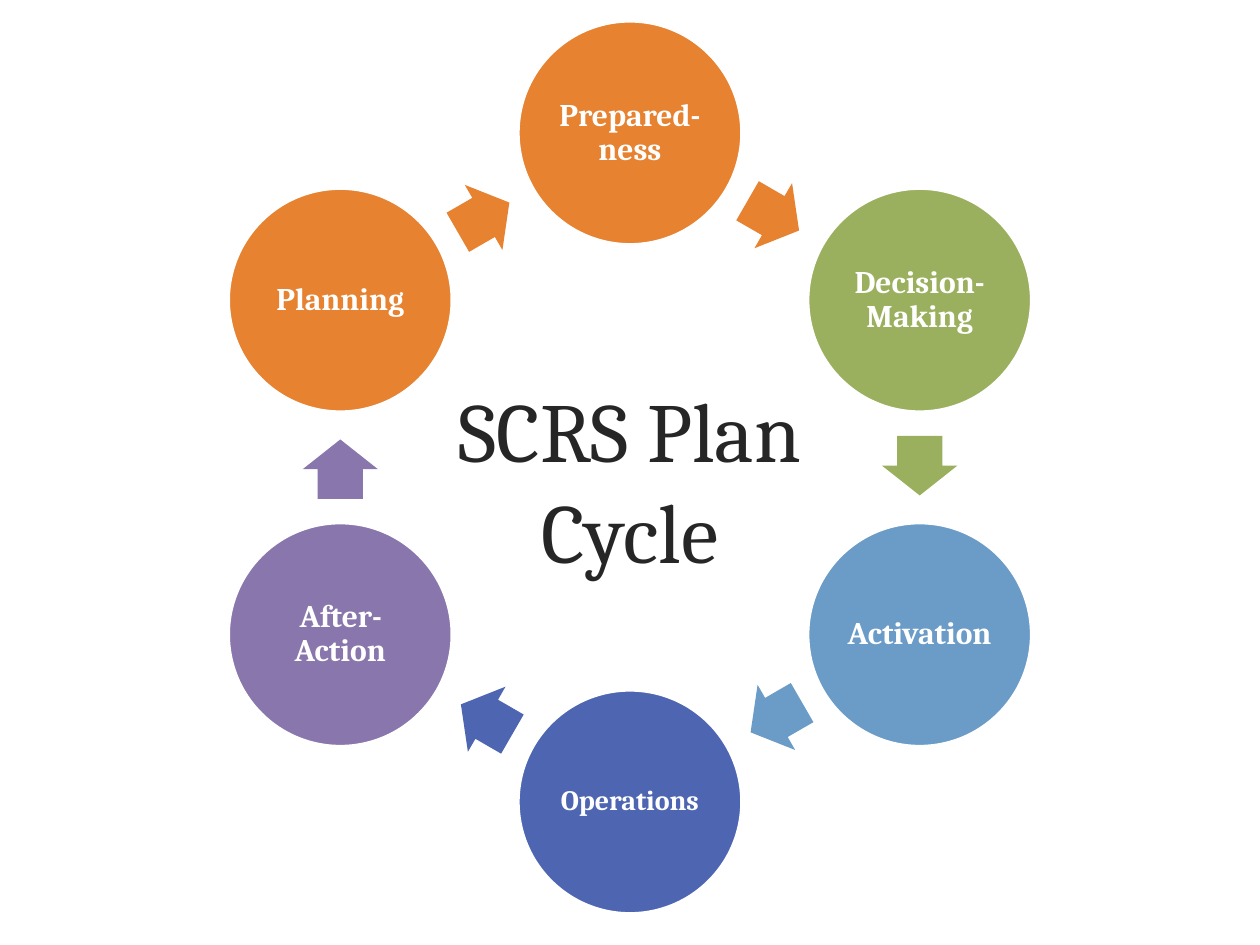
import math

from pptx import Presentation
from pptx.dml.color import RGBColor
from pptx.enum.shapes import MSO_SHAPE
from pptx.enum.text import MSO_ANCHOR, PP_ALIGN
from pptx.util import Pt

OVAL, ARROW = MSO_SHAPE.OVAL, MSO_SHAPE.RIGHT_ARROW
MIDDLE, CENTER = MSO_ANCHOR.MIDDLE, PP_ALIGN.CENTER
FONT = "Cambria"
STAGES = [
    ("Prepared-ness", "E68230", 18),
    ("Decision-Making", "9BB05E", 18),
    ("Activation", "6B9BC7", 18),
    ("Operations", "4E66B2", 16),
    ("After-Action", "8976AC", 18),
    ("Planning", "E68230", 18),
]


def rgb(value):
    """Return a colour from a hex string."""
    return RGBColor.from_string(value)


def add_run(p, text, size, color, bold=False):
    """Add one formatted run to a paragraph."""
    r = p.add_run()
    r.text = text
    r.font.name = FONT
    r.font.size = Pt(size)
    r.font.bold = bold
    r.font.color.rgb = rgb(color)


def add_centered(s, kind, cx, cy, w, h, color):
    """Add a filled preset shape around a centre point."""
    sp = s.shapes.add_shape(kind, Pt(cx - w / 2), Pt(cy - h / 2), Pt(w), Pt(h))
    sp.shadow.inherit = False
    sp.fill.solid()
    sp.fill.fore_color.rgb = rgb(color)
    sp.line.fill.background()
    return sp


def add_stage(s, cx, cy, diameter, label, color, size):
    """Add one labelled circle of the cycle."""
    sp = add_centered(s, OVAL, cx, cy, diameter, diameter, color)
    sp.line.color.rgb = rgb("FFFFFF")
    sp.line.width = Pt(1.5)
    tf = sp.text_frame
    tf.word_wrap = True
    tf.vertical_anchor = MIDDLE
    tf.margin_left = tf.margin_right = tf.margin_top = tf.margin_bottom = Pt(size / 8)
    p = tf.paragraphs[0]
    p.alignment = CENTER
    p.line_spacing = 0.9
    add_run(p, label, size, "FFFFFF", True)


def add_cycle(s, x, y, w, h):
    """Add the ring of circles and arrows inside a box."""
    diameter = 127.5
    radius = (h - diameter) / 2
    cx, cy = x + w / 2, y + h / 2
    step = 360 / len(STAGES)
    mid_radius = radius * math.cos(math.radians(step / 2))
    for i, (label, color, size) in enumerate(STAGES):
        a = math.radians(i * step - 90)
        add_stage(s, cx + radius * math.cos(a), cy + radius * math.sin(a),
                  diameter, label, color, size)
        heading = (i + 0.5) * step
        t = math.radians(heading)
        arrow_x = cx + mid_radius * math.sin(t) - math.cos(t)
        arrow_y = cy - mid_radius * math.cos(t) - math.sin(t)
        sp = add_centered(s, ARROW, arrow_x, arrow_y, 34, 43, color)
        sp.adjustments[0], sp.adjustments[1] = 0.6, 0.5
        sp.rotation = heading


def add_title(s, x, y, w, h):
    """Add the two-line title in the middle of the ring."""
    tf = s.shapes.add_textbox(Pt(x), Pt(y), Pt(w), Pt(h)).text_frame
    tf.word_wrap = True
    tf.vertical_anchor = MIDDLE
    p = tf.paragraphs[0]
    p.alignment = CENTER
    add_run(p, "SCRS Plan", 48, "262626")
    p.add_line_break()
    add_run(p, "Cycle", 48, "262626")


def main():
    """Build and save the slide."""
    prs = Presentation()
    prs.slide_width, prs.slide_height = Pt(720), Pt(540)
    s = prs.slides.add_slide(prs.slide_layouts[6])
    add_cycle(s, 131, 12.2, 458, 509.8)
    add_title(s, 43.5, 217, 633, 114)
    prs.save("out.pptx")


if __name__ == "__main__":
    main()
